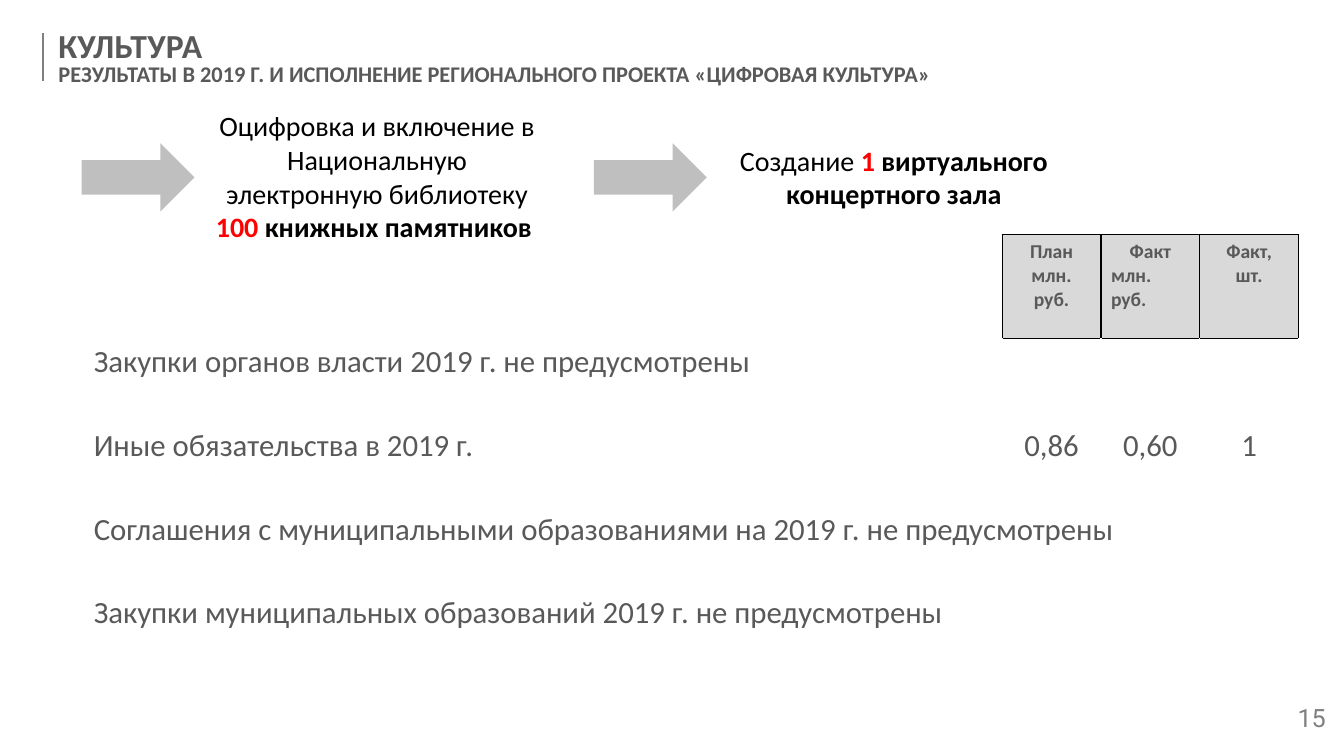
import pptx
import pptx.util
import pptx.dml.color
import pptx.enum.shapes
import pptx.enum.text
import pptx.oxml
import pptx.oxml.ns

Inches = pptx.util.Inches
Pt = pptx.util.Pt
ALIGN = pptx.enum.text.PP_ALIGN
ANCHOR = pptx.enum.text.MSO_ANCHOR

COLORS = {"text": "595959", "grey": "808080", "arrow": "BFBFBF", "header": "D9D9D9",
          "black": "000000", "red": "FF0000"}

TITLE = [
    ("КУЛЬТУРА", 24),
    ("РЕЗУЛЬТАТЫ В 2019 Г. И ИСПОЛНЕНИЕ РЕГИОНАЛЬНОГО ПРОЕКТА «ЦИФРОВАЯ КУЛЬТУРА»", 16),
]
RESULTS = [
    (0.81, (2.03, 1.03, 3.42, 1.45), [
        ("Оцифровка и включение в Национальную электронную библиотеку ", "black", False),
        ("100 ", "red", True),
        ("книжных памятников ", "black", True)]),
    (5.89, (7.22, 1.37, 3.29, 0.77), [
        ("Создание ", "black", False),
        ("1 ", "red", True),
        ("виртуального концертного зала", "black", True)]),
]
HEADERS = [
    (("План", ALIGN.CENTER), ("млн. руб.", ALIGN.CENTER)),
    (("Факт", ALIGN.CENTER), ("млн. руб.", ALIGN.LEFT)),
    (("Факт,", ALIGN.CENTER), ("шт.", ALIGN.CENTER)),
]
ROWS = [
    ("Закупки органов власти 2019 г. не предусмотрены",),
    ("Иные обязательства в 2019 г.", "0,86", "0,60", "1"),
    ("Соглашения с муниципальными образованиями на 2019 г. не предусмотрены",),
    ("Закупки муниципальных образований 2019 г. не предусмотрены",),
]
WIDE_ROW = 3
COLUMN_WIDTHS = [0.35, 9.11, 0.98, 0.98, 0.98]
ROW_HEIGHTS = [1.03] + [0.83] * len(ROWS)
PAGE_NUMBER = "15"


def rgb(name):
    return pptx.dml.color.RGBColor.from_string(COLORS[name])


def style(font, size, color, bold=False, name="Calibri"):
    font.size, font.bold, font.name = Pt(size), bold, name
    font.color.rgb = rgb(color)


def write(frame, lines, size, bold=False):
    for index, (text, alignment) in enumerate(lines):
        paragraph = frame.add_paragraph() if index else frame.paragraphs[0]
        paragraph.text = text
        paragraph.alignment = alignment
        style(paragraph.font, size, "text", bold)


def add_borders(cell, sides):
    properties = cell._tc.get_or_add_tcPr()
    for index, side in enumerate(sides):
        properties.insert(index, pptx.oxml.parse_xml(
            f'<a:ln{side} {pptx.oxml.ns.nsdecls("a")} w="12700"><a:solidFill>'
            f'<a:srgbClr val="{COLORS["black"]}"/></a:solidFill></a:ln{side}>'))


def add_title(slide):
    title = slide.shapes.title
    title.left, title.top = Inches(0.48), Inches(0.26)
    title.width, title.height = Inches(12.8), Inches(0.67)
    frame = title.text_frame
    frame.auto_size = pptx.enum.text.MSO_AUTO_SIZE.NONE
    frame.vertical_anchor = ANCHOR.MIDDLE
    for index, (text, size) in enumerate(TITLE):
        write_to = frame.add_paragraph() if index else frame.paragraphs[0]
        write_to.text = text
        write_to.alignment = ALIGN.LEFT
        write_to.line_spacing = 0.8
        write_to.space_before = Pt(0)
        style(write_to.font, size, "text", True)

    line = slide.shapes.add_connector(pptx.enum.shapes.MSO_CONNECTOR.STRAIGHT,
                                      Inches(0.43), Inches(0.33), Inches(0.43), Inches(0.8))
    line.line.color.rgb = rgb("grey")
    line.line.width = Pt(1.5)
    line._element.spPr.append(pptx.oxml.parse_xml(
        f'<a:effectLst {pptx.oxml.ns.nsdecls("a")}/>'))


def add_result(slide, arrow_left, box, runs):
    arrow = slide.shapes.add_shape(pptx.enum.shapes.MSO_SHAPE.RIGHT_ARROW,
                                   Inches(arrow_left), Inches(1.42), Inches(1.12), Inches(0.68))
    arrow.shadow.inherit = False
    arrow.fill.solid()
    arrow.fill.fore_color.rgb = rgb("arrow")
    arrow.line.fill.background()

    frame = slide.shapes.add_textbox(*map(Inches, box)).text_frame
    frame.word_wrap = True
    paragraph = frame.paragraphs[0]
    paragraph.alignment = ALIGN.CENTER
    for text, color, bold in runs:
        run = paragraph.add_run()
        run.text = text
        style(run.font, 20, color, bold)


def add_spending_table(slide):
    table = slide.shapes.add_table(
        len(ROW_HEIGHTS), len(COLUMN_WIDTHS), Inches(0.48), Inches(2.33),
        Inches(sum(COLUMN_WIDTHS)), Inches(sum(ROW_HEIGHTS))).table
    table.first_row = table.horz_banding = False
    for column, width in zip(table.columns, COLUMN_WIDTHS):
        column.width = Inches(width)
    for row, height in zip(table.rows, ROW_HEIGHTS):
        row.height = Inches(height)
    for cell in table.iter_cells():
        cell.fill.background()

    for column, lines in enumerate(HEADERS, 2):
        cell = table.cell(0, column)
        cell.fill.solid()
        cell.fill.fore_color.rgb = rgb("header")
        write(cell.text_frame, lines, 14, True)
        add_borders(cell, "LRTB")
        add_borders(table.cell(1, column), "T")
    add_borders(table.cell(0, 1), "R")

    for row, values in enumerate(ROWS, 1):
        for column, value in enumerate(values, 1):
            alignment = ALIGN.LEFT if column == 1 else ALIGN.CENTER
            write(table.cell(row, column).text_frame, [(value, alignment)], 22)
    table.cell(WIDE_ROW, 1).merge(table.cell(WIDE_ROW, 4))


def add_page_number(slide):
    frame = slide.shapes.add_textbox(Inches(12.7), Inches(6.9), Inches(0.62), Inches(0.5)).text_frame
    frame.word_wrap = True
    frame.vertical_anchor = ANCHOR.MIDDLE
    paragraph = frame.paragraphs[0]
    paragraph.text = PAGE_NUMBER
    paragraph.alignment = ALIGN.CENTER
    paragraph.line_spacing = 0.8
    style(paragraph.font, 18, "grey", name="Roboto")


def main():
    presentation = pptx.Presentation()
    presentation.slide_width, presentation.slide_height = Inches(13.33), Inches(7.5)
    slide = presentation.slides.add_slide(presentation.slide_layouts[5])
    add_title(slide)
    add_page_number(slide)
    add_spending_table(slide)
    for result in RESULTS:
        add_result(slide, *result)
    presentation.save("out.pptx")


if __name__ == "__main__":
    main()
